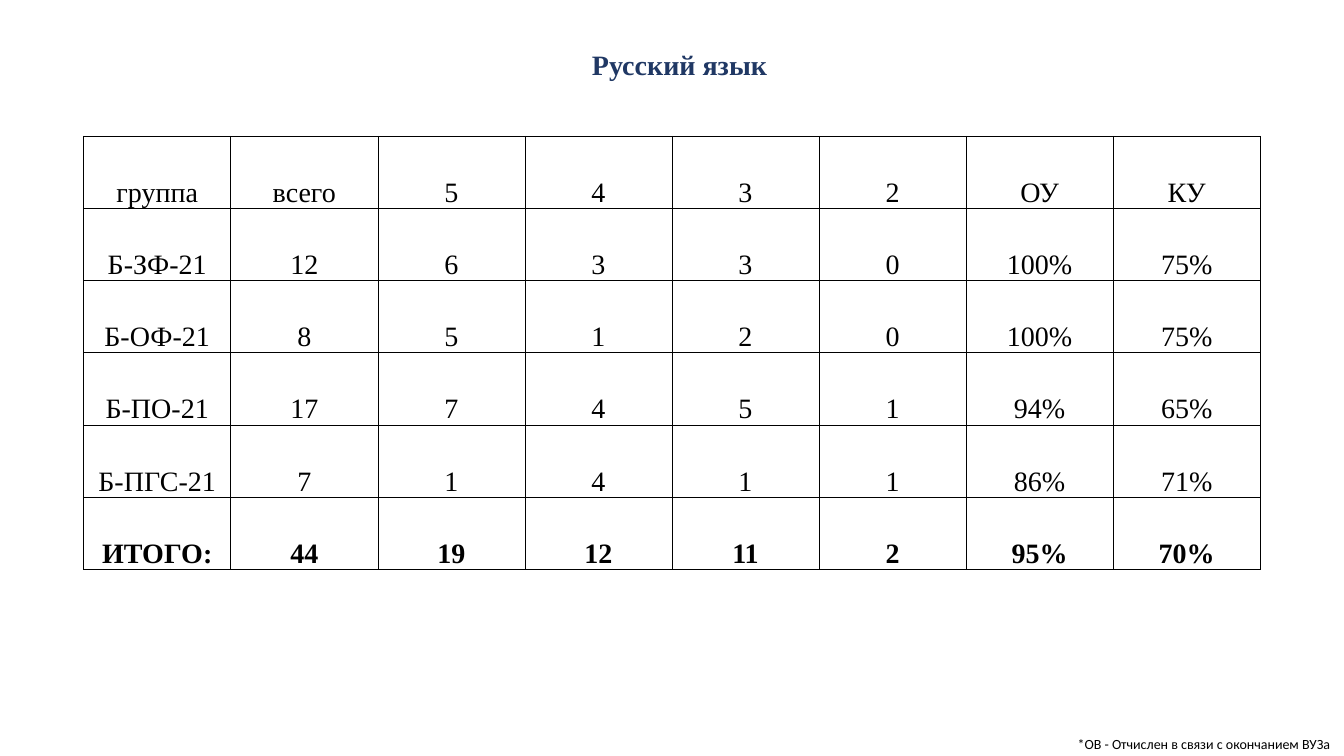
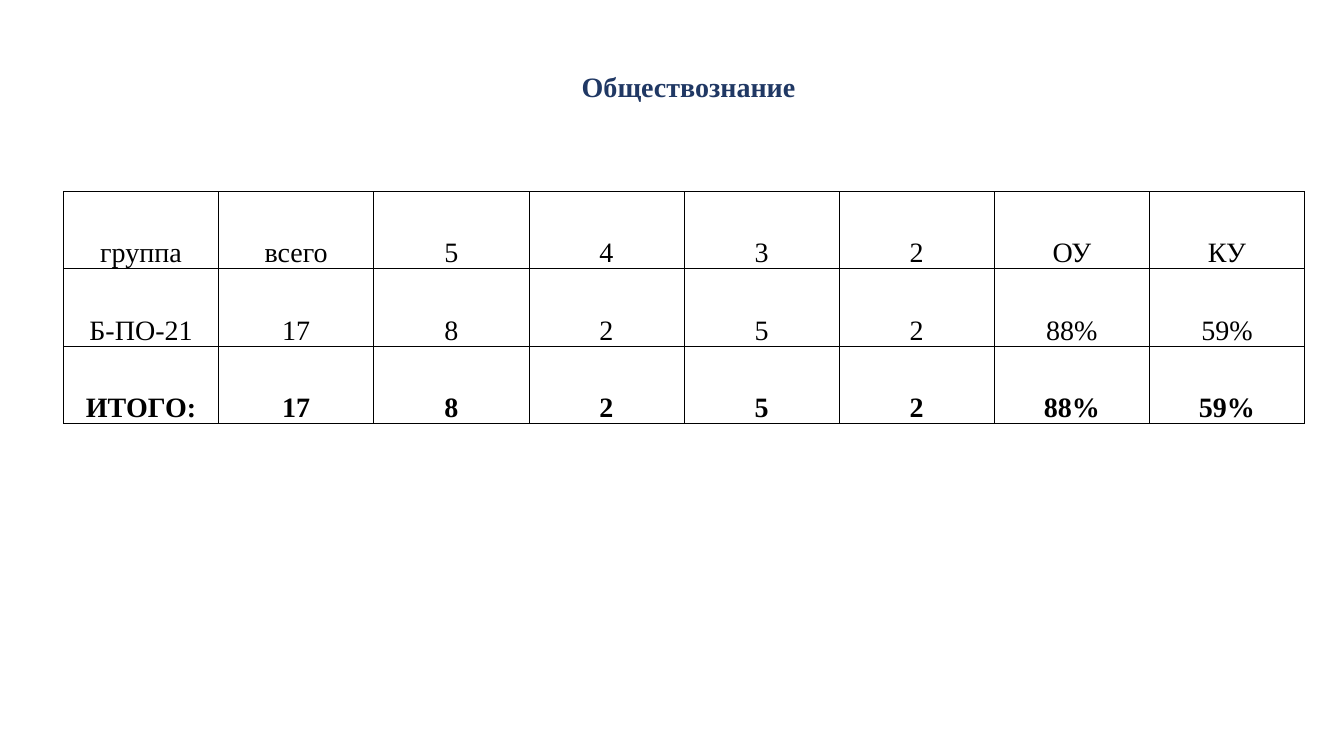
from lxml.etree import SubElement
from pptx import Presentation
from pptx.dml.color import RGBColor
from pptx.enum.text import MSO_ANCHOR as Anchor, MSO_AUTO_SIZE as AutoSize, PP_ALIGN as Align
from pptx.oxml.ns import qn
from pptx.util import Inches, Pt

NAVY = RGBColor(0x20, 0x38, 0x64)
BLACK = RGBColor(0, 0, 0)
SERIF = "Times New Roman"
SANS = "Calibri"
TEXT_SIZE = 20
NOTE_SIZE = 10
BORDER_WIDTH = Pt(0.5)
CELL_INSET = Inches(0.01)
TITLE_ONLY = 5

HEADINGS = ("группа", "всего", "5", "4", "3", "2", "ОУ", "КУ")
RUSSIAN = (
    ("Б-ЗФ-21", "12", "6", "3", "3", "0", "100%", "75%"),
    ("Б-ОФ-21", "8", "5", "1", "2", "0", "100%", "75%"),
    ("Б-ПО-21", "17", "7", "4", "5", "1", "94%", "65%"),
    ("Б-ПГС-21", "7", "1", "4", "1", "1", "86%", "71%"),
    ("ИТОГО:", "44", "19", "12", "11", "2", "95%", "70%"),
)
SOCIAL_STUDIES = (
    ("Б-ПО-21", "17", "8", "2", "5", "2", "88%", "59%"),
    ("ИТОГО:", "17", "8", "2", "5", "2", "88%", "59%"),
)
FOOTNOTE = "*ОВ - Отчислен в связи с окончанием ВУЗа"


def add_text(paragraph, text, size=TEXT_SIZE, font=SERIF, color=BLACK, bold=False):
    """Add one formatted run to a paragraph."""
    run = paragraph.add_run()
    run.text = text
    run.font.size = Pt(size)
    run.font.name = font
    run.font.color.rgb = color
    run.font.bold = bold


def place_title(slide, subject, box):
    """Move the title placeholder into the box and write the subject."""
    title = slide.shapes.title
    title.left, title.top, title.width, title.height = map(Inches, box)
    frame = title.text_frame
    frame.vertical_anchor = Anchor.MIDDLE
    frame.auto_size = AutoSize.NONE
    heading = frame.paragraphs[0]
    heading.alignment = Align.CENTER
    heading.line_spacing = 0.9
    add_text(heading, subject, color=NAVY, bold=True)


def draw_borders(cell):
    """Draw a thin black line on every side of a cell."""
    properties = cell._tc.get_or_add_tcPr()
    for side in ("a:lnL", "a:lnR", "a:lnT", "a:lnB"):
        line = SubElement(properties, qn(side), w=str(BORDER_WIDTH))
        fill = SubElement(line, qn("a:solidFill"))
        SubElement(fill, qn("a:srgbClr"), val=str(BLACK))


def fill_cell(cell, text, bold):
    """Write centred text at the foot of a bordered, unfilled cell."""
    draw_borders(cell)
    cell.fill.background()
    cell.vertical_anchor = Anchor.BOTTOM
    cell.margin_left = cell.margin_right = cell.margin_top = CELL_INSET
    cell.margin_bottom = 0
    paragraph = cell.text_frame.paragraphs[0]
    paragraph.alignment = Align.CENTER
    add_text(paragraph, text, bold=bold)


def place_grades(slide, groups, box):
    """Fill the box with an even grid of grades whose last row is the total."""
    rows = (HEADINGS, *groups)
    grades = slide.shapes.add_table(len(rows), len(HEADINGS), *map(Inches, box)).table
    grades.first_row = grades.horz_banding = False
    for row_index, values in enumerate(rows):
        is_total = row_index == len(rows) - 1
        for column_index, value in enumerate(values):
            fill_cell(grades.cell(row_index, column_index), value, is_total)


def place_footnote(slide, text, box):
    """Write a one-line note in the box."""
    frame = slide.shapes.add_textbox(*map(Inches, box)).text_frame
    frame.word_wrap = False
    frame.auto_size = AutoSize.SHAPE_TO_FIT_TEXT
    add_text(frame.paragraphs[0], text, size=NOTE_SIZE, font=SANS)


def add_subject_slide(deck, subject, groups, title_box, grades_box):
    """Add a slide with the grades of one subject."""
    slide = deck.slides.add_slide(deck.slide_layouts[TITLE_ONLY])
    place_title(slide, subject, title_box)
    place_grades(slide, groups, grades_box)
    return slide


def main():
    """Build and save the deck."""
    deck = Presentation()
    deck.slide_width, deck.slide_height = Inches(13.33), Inches(7.5)
    russian = add_subject_slide(
        deck, "Русский язык", RUSSIAN, (0.99, 0.28, 11.5, 0.75), (0.83, 1.35, 11.67, 4.3)
    )
    place_footnote(russian, FOOTNOTE, (10.59, 7.25, 2.75, 0.27))
    add_subject_slide(
        deck, "Обществознание", SOCIAL_STUDIES, (1.08, 0.51, 11.5, 0.74), (0.63, 1.9, 12.31, 2.3)
    )
    deck.save("out.pptx")


if __name__ == "__main__":
    main()
